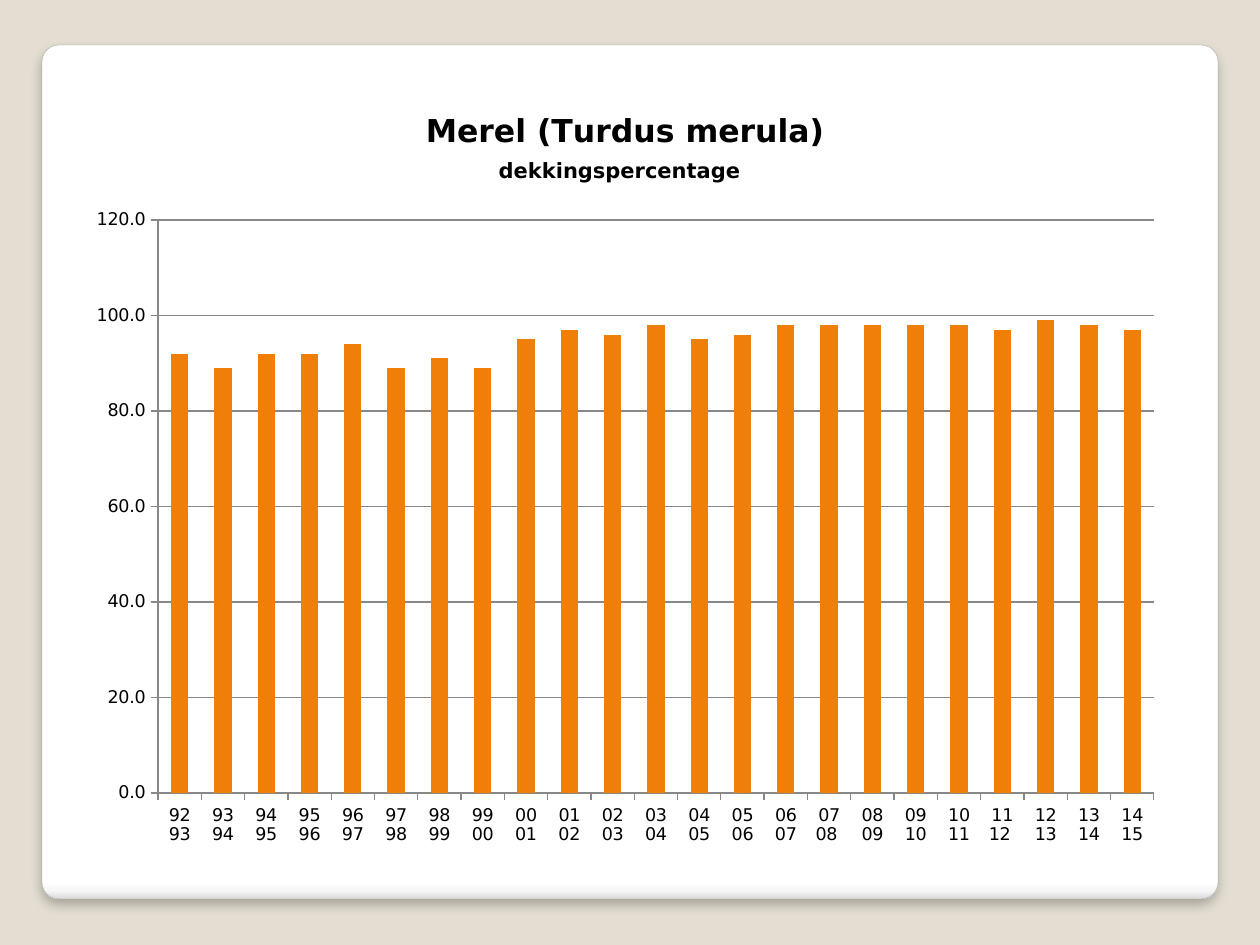
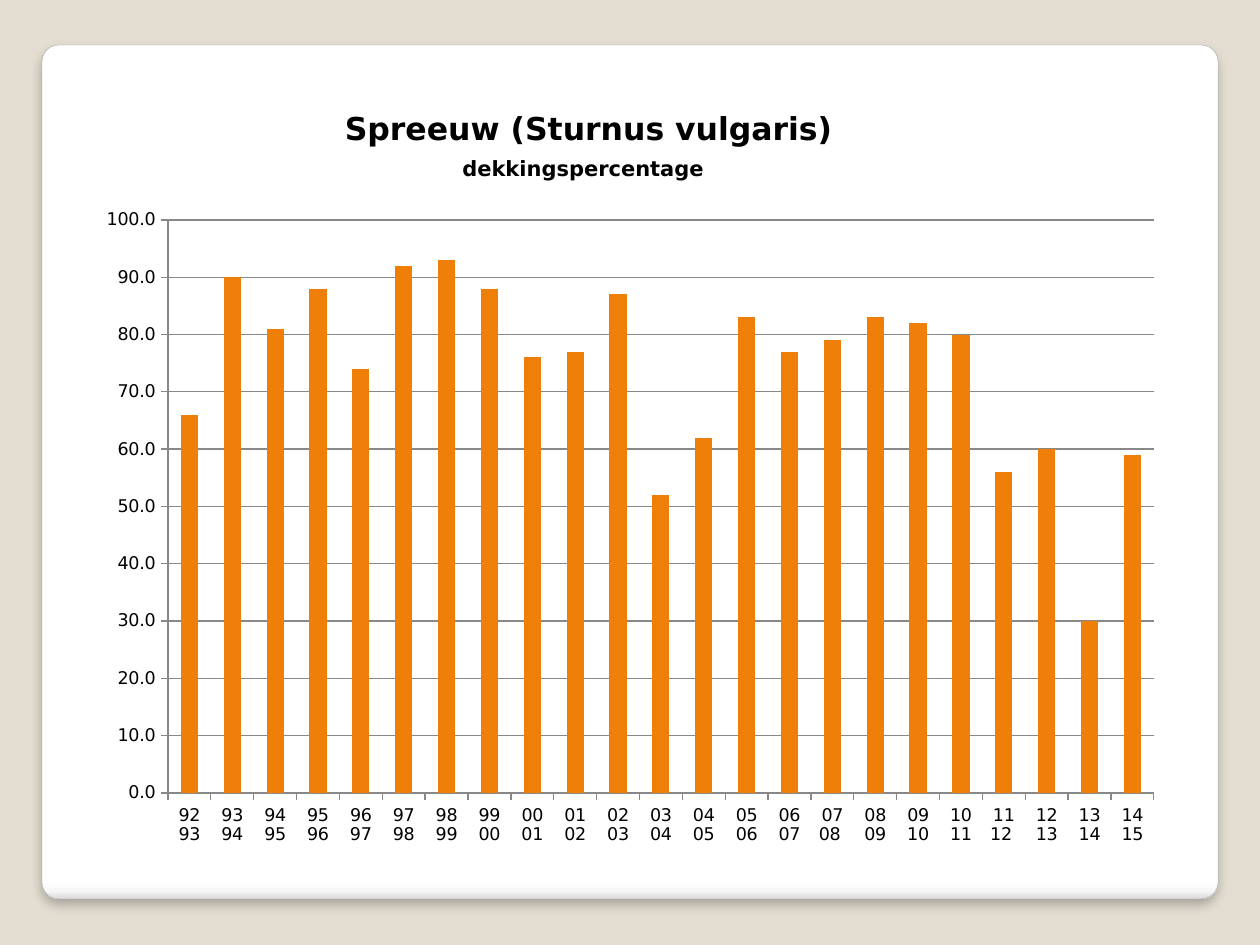
from pptx import Presentation
from pptx.chart.data import CategoryChartData
from pptx.dml.color import RGBColor
from pptx.enum.chart import XL_CHART_TYPE, XL_TICK_MARK
from pptx.enum.shapes import MSO_SHAPE
from pptx.oxml import parse_xml
from pptx.oxml.ns import nsdecls
from pptx.util import Pt

COLUMN = XL_CHART_TYPE.COLUMN_CLUSTERED
OUT, NONE = XL_TICK_MARK.OUTSIDE, XL_TICK_MARK.NONE
ROUND = MSO_SHAPE.ROUNDED_RECTANGLE

FONT = "DejaVu Sans"
HEX = {"back": "E3DED1", "edge": "A4A4A4", "bar": "F07F09",
       "grid": "888888", "text": "000000"}
STOPS = [(0, "FFFFFF"), (98, "FFFFFF"), (99, "F7F7F7"), (100, "DADADA")]
COLOR = {name: RGBColor.from_string(code) for name, code in HEX.items()}


def px(n):
    return round(n * 914400 / 126)


def place(node, x, y, w=None, h=None):
    """Fix a chart part at fractions of the chart frame."""
    for old in node.xpath("c:layout"):
        node.remove(old)
    parts = [("xMode", "edge"), ("yMode", "edge"), ("x", x), ("y", y)]
    if w:
        parts = [("layoutTarget", "inner")] + parts + [("w", w), ("h", h)]
    tags = "".join(f'<c:{k} val="{v}"/>' for k, v in parts)
    layout = parse_xml(f'<c:layout {nsdecls("c")}><c:manualLayout>{tags}'
                       '</c:manualLayout></c:layout>')
    node.insert(len(node.xpath("c:tx")), layout)


# Winter seasons: 92 93 to 14 15
seasons = [f"{y % 100:02d} {(y + 1) % 100:02d}" for y in range(1992, 2015)]
for n in (15, 19):
    seasons[n] += " "

# Bird, frame left, plot left, title left, title top, axis top, axis step, values
birds = [
    ("Merel (Turdus merula)", 74, 158, 422, 107, 120, 20,
     [92, 89, 92, 92, 94, 89, 91, 89, 95, 97, 96, 98,
      95, 96, 98, 98, 98, 98, 98, 97, 99, 98, 97]),
    ("Spreeuw (Sturnus vulgaris)", 84, 168, 341, 105, 100, 10,
     [66, 90, 81, 88, 74, 92, 93, 88, 76, 77, 87, 52,
      62, 83, 77, 79, 83, 82, 80, 56, 60, 30, 59]),
]
TOP, RIGHT, HIGH = 86, 1175, 774
ROOF, FLOOR, END = 220, 793, 1154

deck = Presentation()
deck.slide_width, deck.slide_height = px(1260), px(945)
blank = deck.slide_layouts[6]

# Shared background
back = blank.background.fill
back.solid()
back.fore_color.rgb = COLOR["back"]

for name, left, plot, head, rise, peak, step, vals in birds:
    slide = deck.slides.add_slide(blank)
    wide = RIGHT - left

    # White panel with a soft lower edge
    panel = slide.shapes.add_shape(ROUND, px(42), px(45), px(1176), px(854))
    panel.adjustments[0] = 0.02
    panel.line.color.rgb = COLOR["edge"]
    panel.line.width = Pt(0.16)
    panel.fill.gradient()
    panel.fill.gradient_angle = 270
    panel.shadow.inherit = False
    stops = panel.element.xpath(".//a:gsLst")[0]
    for old in list(stops):
        stops.remove(old)
    for pos, code in STOPS:
        stops.append(parse_xml(f'<a:gs {nsdecls("a")} pos="{pos * 1000}">'
                               f'<a:srgbClr val="{code}"/></a:gs>'))
    glow = panel.element.xpath("./p:spPr/a:effectLst")[0]
    glow.append(parse_xml(
        f'<a:outerShdw {nsdecls("a")} blurRad="{Pt(6)}" dist="{Pt(4)}" '
        'dir="5400000"><a:srgbClr val="000000"><a:alpha val="25000"/>'
        '</a:srgbClr></a:outerShdw>'))

    # Column chart
    data = CategoryChartData(number_format="0.0")
    data.categories = seasons
    data.add_series("Series 1", vals)
    chart = slide.shapes.add_chart(COLUMN, px(left), px(TOP), px(wide),
                                   px(HIGH), data).chart
    chart.has_legend = False
    chart.font.name, chart.font.size = FONT, Pt(10)
    chart.font.color.rgb = COLOR["text"]

    bars = chart.plots[0]
    bars.gap_width = 150
    bars.vary_by_categories = False
    fill = bars.series[0].format.fill
    fill.solid()
    fill.fore_color.rgb = COLOR["bar"]

    # Title in two lines; the closing space keeps the large size
    frame = chart.chart_title.text_frame
    frame.text = f"{name}\ndekkingspercentage"
    last = frame.paragraphs[1]
    last.add_run().text = " "
    for para in frame.paragraphs:
        font = para.font
        font.name, font.size, font.bold = FONT, Pt(18), True
        font.color.rgb = COLOR["text"]
    for run, size in zip(last.runs, (12, 18)):
        run.font.size = Pt(size)
    chart.chart_title.include_in_layout = False

    # Axes and grid
    cat, val = chart.category_axis, chart.value_axis
    val.minimum_scale, val.maximum_scale, val.major_unit = 0, peak, step
    val.has_major_gridlines = True
    val.tick_labels.number_format = "0.0"
    val.tick_labels.number_format_is_linked = False
    for axis in (cat, val):
        axis.major_tick_mark, axis.minor_tick_mark = OUT, NONE
    for part in (cat, val, val.major_gridlines):
        part.format.line.color.rgb = COLOR["grid"]
        part.format.line.width = Pt(0.75)

    # Positions inside the frame
    root = chart.element
    place(root.xpath("c:chart/c:title")[0],
          (head - left) / wide, (rise - TOP) / HIGH)
    place(root.xpath("c:chart/c:plotArea")[0],
          (plot - left) / wide, (ROOF - TOP) / HIGH,
          (END - plot) / wide, (FLOOR - ROOF) / HIGH)

deck.save("out.pptx")
